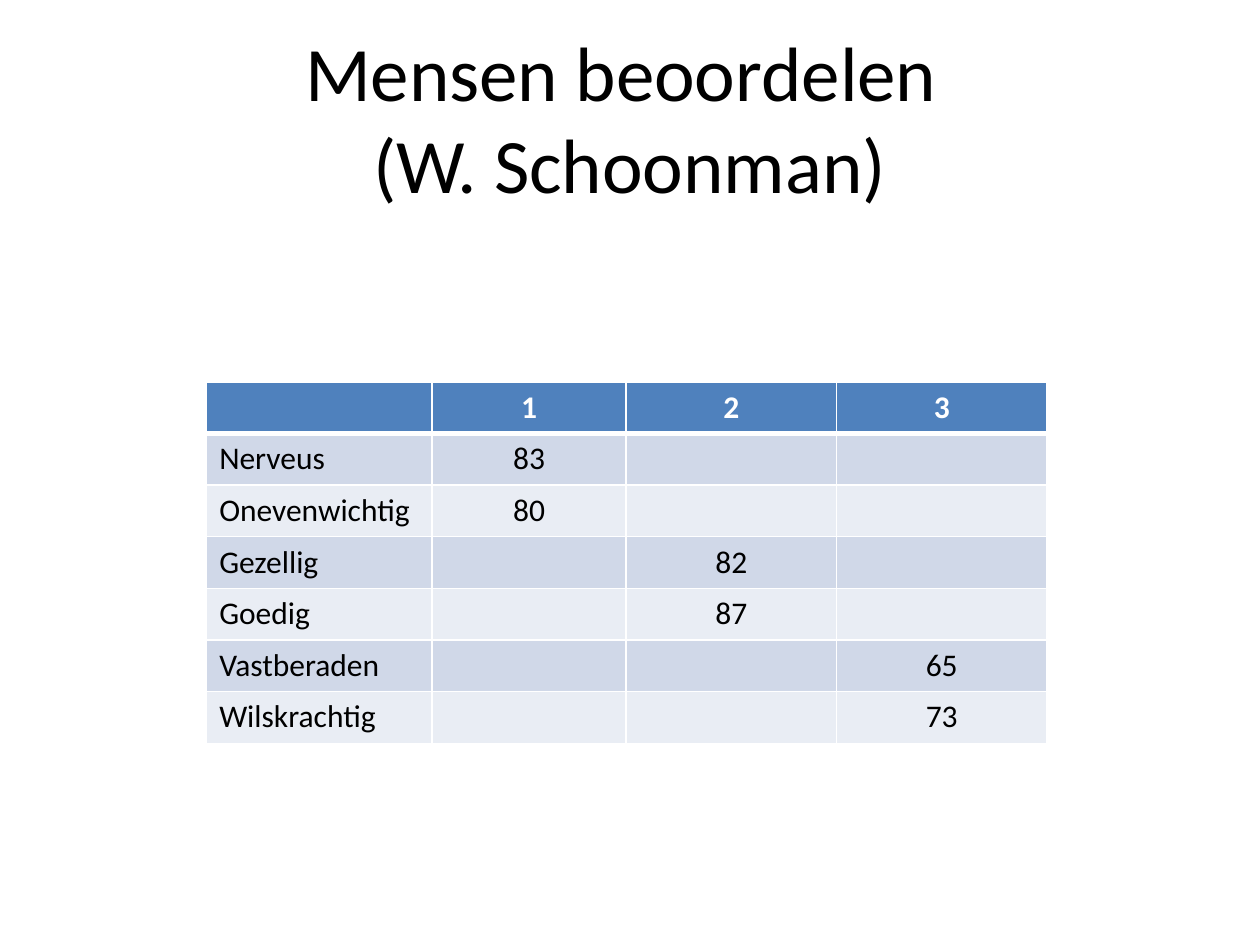
from lxml import etree
from pptx import Presentation
from pptx.dml.color import RGBColor
from pptx.enum.text import MSO_ANCHOR, PP_ALIGN
from pptx.oxml.ns import qn
from pptx.util import Inches, Pt

CENTER, LEFT = PP_ALIGN.CENTER, PP_ALIGN.LEFT
MIDDLE = MSO_ANCHOR.MIDDLE

FONT = "Calibri"
BLACK = RGBColor(0x00, 0x00, 0x00)
WHITE = RGBColor(0xFF, 0xFF, 0xFF)
HEADER = RGBColor(0x4F, 0x81, 0xBD)
BANDS = (RGBColor(0xD0, 0xD8, 0xE8), RGBColor(0xE9, 0xED, 0xF4))

COL_WIDTHS = (1.79, 1.54, 1.67, 1.67)
ROW_HEIGHT = 0.41
ROWS = (
    ("", "1", "2", "3"),
    ("Nerveus", "83", "", ""),
    ("Onevenwichtig", "80", "", ""),
    ("Gezellig", "", "82", ""),
    ("Goedig", "", "87", ""),
    ("Vastberaden", "", "", "65"),
    ("Wilskrachtig", "", "", "73"),
)


def style_paragraph(p, size, color, align, bold=False):
    p.alignment = align
    p.font.name = FONT
    p.font.size = Pt(size)
    p.font.bold = bold
    p.font.color.rgb = color


def add_title(slide, text):
    box = slide.shapes.add_textbox(Inches(0.5), Inches(0.3), Inches(9), Inches(1.25))
    tf = box.text_frame
    tf.word_wrap = True
    tf.vertical_anchor = MIDDLE
    p = tf.paragraphs[0]
    p.text = text
    style_paragraph(p, 44, BLACK, CENTER)


def set_borders(cell, color, widths):
    """Draw the left, right, top and bottom borders, widths in points."""
    tcPr = cell._tc.get_or_add_tcPr()
    for i, (side, width) in enumerate(zip("LRTB", widths)):
        ln = etree.Element(qn(f"a:ln{side}"), w=str(Pt(width)))
        fill = etree.SubElement(ln, qn("a:solidFill"))
        etree.SubElement(fill, qn("a:srgbClr"), val=str(color))
        tcPr.insert(i, ln)


def add_score_table(slide):
    frame = slide.shapes.add_table(
        len(ROWS), len(COL_WIDTHS), Inches(1.64), Inches(3.03),
        Inches(sum(COL_WIDTHS)), Inches(ROW_HEIGHT * len(ROWS)))
    table = frame.table
    for column, width in zip(table.columns, COL_WIDTHS):
        column.width = Inches(width)

    for r, values in enumerate(ROWS):
        table.rows[r].height = Inches(ROW_HEIGHT)
        is_header = r == 0
        for c, value in enumerate(values):
            cell = table.cell(r, c)
            cell.text = value
            style_paragraph(cell.text_frame.paragraphs[0], 18,
                            WHITE if is_header else BLACK,
                            CENTER if c else LEFT, is_header)
            cell.fill.solid()
            cell.fill.fore_color.rgb = HEADER if is_header else BANDS[(r - 1) % 2]
            # Thick rule between the header and the first row
            set_borders(cell, WHITE, (1, 1, 3 if r == 1 else 1, 3 if is_header else 1))


def main():
    prs = Presentation()
    prs.slide_width, prs.slide_height = Inches(10), Inches(7.5)
    slide = prs.slides.add_slide(prs.slide_layouts[6])

    add_score_table(slide)
    add_title(slide, "Mensen beoordelen \v(W. Schoonman)")

    prs.save("out.pptx")


if __name__ == "__main__":
    main()
